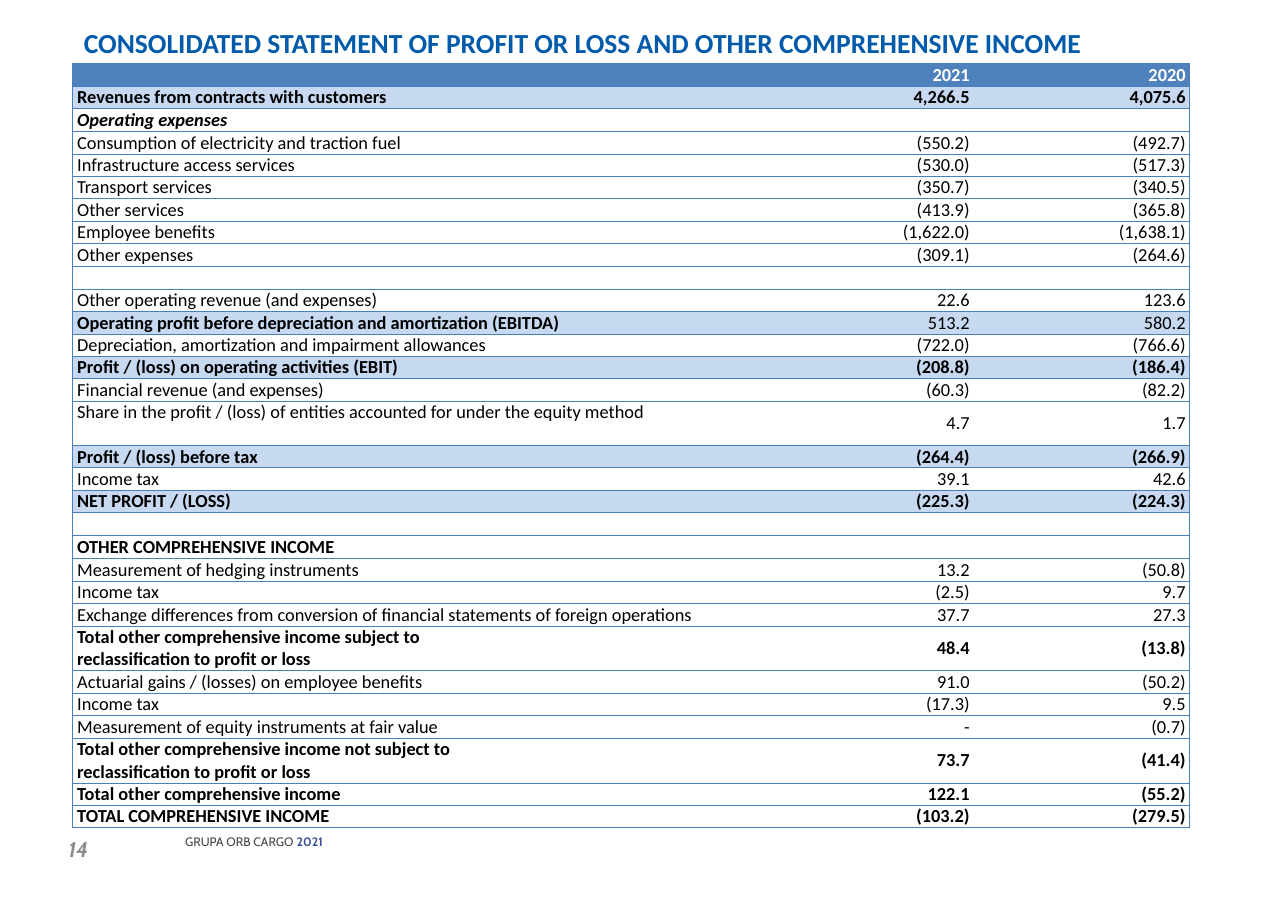
"""Build the consolidated profit or loss statement slide."""
import lxml.etree
import pptx
import pptx.dml.color
import pptx.enum.text
import pptx.oxml.ns
import pptx.util

Cm = pptx.util.Cm
Pt = pptx.util.Pt
ALIGN = pptx.enum.text.PP_ALIGN
ANCHOR = pptx.enum.text.MSO_ANCHOR

TITLE = "CONSOLIDATED STATEMENT OF PROFIT OR LOSS AND OTHER COMPREHENSIVE INCOME"
FOOTER = ("GRUPA ORB CARGO ", "2021")
PAGE_NUMBER = "14"
ROWS = [
    ("header", "", "2021", "2020"),
    ("band", "Revenues from contracts with customers", "4,266.5", "4,075.6"),
    ("italic", "Operating expenses", "", ""),
    ("plain", "Consumption of electricity and traction fuel", "(550.2)", "(492.7)"),
    ("plain", "Infrastructure access services", "(530.0)", "(517.3)"),
    ("plain", "Transport services", "(350.7)", "(340.5)"),
    ("plain", "Other services", "(413.9)", "(365.8)"),
    ("plain", "Employee benefits", "(1,622.0)", "(1,638.1)"),
    ("plain", "Other expenses", "(309.1)", "(264.6)"),
    ("plain", "", "", ""),
    ("plain", "Other operating revenue (and expenses)", "22.6", "123.6"),
    ("band light", "Operating profit before depreciation and amortization (EBITDA)", "513.2", "580.2"),
    ("plain", "Depreciation, amortization and impairment allowances", "(722.0)", "(766.6)"),
    ("band", "Profit / (loss) on operating activities (EBIT)", "(208.8)", "(186.4)"),
    ("plain", "Financial revenue (and expenses)", "(60.3)", "(82.2)"),
    ("tall", "Share in the profit / (loss) of entities accounted for under the equity method", "4.7", "1.7"),
    ("band", "Profit / (loss) before tax", "(264.4)", "(266.9)"),
    ("plain", "Income tax", "39.1", "42.6"),
    ("band", "NET PROFIT / (LOSS)", "(225.3)", "(224.3)"),
    ("plain", "", "", ""),
    ("bold", "OTHER COMPREHENSIVE INCOME", "", ""),
    ("plain", "Measurement of hedging instruments", "13.2", "(50.8)"),
    ("plain", "Income tax", "(2.5)", "9.7"),
    ("plain", "Exchange differences from conversion of financial statements of foreign operations", "37.7", "27.3"),
    ("bold", "Total other comprehensive income subject to\vreclassification to profit or loss", "48.4", "(13.8)"),
    ("plain", "Actuarial gains / (losses) on employee benefits", "91.0", "(50.2)"),
    ("plain", "Income tax", "(17.3)", "9.5"),
    ("plain", "Measurement of equity instruments at fair value", "-", "(0.7)"),
    ("bold", "Total other comprehensive income not subject to\vreclassification to profit or loss", "73.7", "(41.4)"),
    ("bold", "Total other comprehensive income", "122.1", "(55.2)"),
    ("bold", "TOTAL COMPREHENSIVE INCOME", "(103.2)", "(279.5)"),
]
FILLS = {"header": "4F81BD", "band": "C6D9F1", "band light": "C6D9F1"}
COLUMN_WIDTHS = (15.8, 4.98, 4.98)
LINE_HEIGHT, OPEN_HEIGHT = 0.51, 0.53
LEFT, TABLE_TOP = 1.68, 1.47
BORDER = "4B7EBC"


def color(value):
    return pptx.dml.color.RGBColor.from_string(value)


def format_span(span, size, shade, name="Calibri", bold=False, italic=False):
    font = span.font
    font.size, font.name, font.bold, font.italic = Pt(size), name, bold, italic
    font.color.rgb = color(shade)


def row_height(row):
    style, label, value, _ = row
    if not value:
        return OPEN_HEIGHT
    return LINE_HEIGHT * (2 if style == "tall" or "\v" in label else 1)


def add_borders(cell, visible):
    for side in "LRTB":
        line = lxml.etree.SubElement(cell._tc.get_or_add_tcPr(), pptx.oxml.ns.qn("a:ln" + side), w=str(Pt(0.75)))
        if side in visible:
            fill = lxml.etree.SubElement(line, pptx.oxml.ns.qn("a:solidFill"))
            lxml.etree.SubElement(fill, pptx.oxml.ns.qn("a:srgbClr"), val=BORDER)
        else:
            lxml.etree.SubElement(line, pptx.oxml.ns.qn("a:noFill"))


def fill_cell(cell, text, style, column):
    add_borders(cell, "TB" + {0: "L", 1: "", 2: "R"}[column])
    cell.fill.solid()
    cell.fill.fore_color.rgb = color(FILLS.get(style, "FFFFFF"))
    cell.margin_left = cell.margin_right = Cm(0.1)
    cell.margin_top = cell.margin_bottom = 0
    top = style == "tall" and column == 0
    cell.vertical_anchor = ANCHOR.TOP if top else ANCHOR.MIDDLE
    para = cell.text_frame.paragraphs[0]
    para.alignment = ALIGN.RIGHT if column else ALIGN.LEFT
    if not text:
        lxml.etree.SubElement(para._p, pptx.oxml.ns.qn("a:endParaRPr"), sz="1200")
        return
    para.text = text
    bold = style not in ("plain", "tall") and not (style == "band light" and column)
    shade = "FFFFFF" if style == "header" else "000000"
    for span in para.runs:
        format_span(span, 12, shade, bold=bold, italic=style == "italic")


def add_statement(page):
    heights = [row_height(row) for row in ROWS]
    frame = page.shapes.add_table(len(ROWS), len(COLUMN_WIDTHS), Cm(LEFT), Cm(TABLE_TOP),
                                  Cm(sum(COLUMN_WIDTHS)), Cm(sum(heights)))
    table = frame.table
    table.horz_banding = False
    for column, width in zip(table.columns, COLUMN_WIDTHS):
        column.width = Cm(width)
    for index, (style, *texts) in enumerate(ROWS):
        table.rows[index].height = Cm(heights[index])
        for column, text in enumerate(texts):
            fill_cell(table.cell(index, column), text, style, column)


def add_title(page):
    title = page.shapes.title
    title.left, title.top, title.width, title.height = Cm(LEFT), Cm(0.46), Cm(26.21), Cm(1.02)
    title.text_frame.text = TITLE
    title.text_frame.vertical_anchor = ANCHOR.MIDDLE
    para = title.text_frame.paragraphs[0]
    para.alignment = ALIGN.LEFT
    format_span(para.runs[0], 18, "015BAA", bold=True)


def add_footer(page):
    box = page.shapes.add_textbox(Cm(4.27), Cm(19.24), Cm(3.8), Cm(0.38))
    frame = box.text_frame
    frame.word_wrap = True
    frame.margin_left = frame.margin_right = frame.margin_top = frame.margin_bottom = 0
    for text, shade, bold in zip(FOOTER, ("454545", "3A4D98"), (False, True)):
        span = frame.paragraphs[0].add_run()
        span.text = text
        format_span(span, 8, shade, "Cabin", bold)

    box = page.shapes.add_textbox(Cm(1.12), Cm(18.9), Cm(1.17), Cm(1.32))
    box.text_frame.word_wrap = True
    box.text_frame.vertical_anchor = ANCHOR.MIDDLE
    box.text_frame.text = PAGE_NUMBER
    para = box.text_frame.paragraphs[0]
    para.alignment = ALIGN.RIGHT
    format_span(para.runs[0], 14, "8C8C8C", "Cabin", True, True)


def main():
    deck = pptx.Presentation()
    deck.slide_width, deck.slide_height = Cm(29.7), Cm(21)
    page = deck.slides.add_slide(deck.slide_layouts[5])
    add_title(page)
    add_statement(page)
    add_footer(page)
    deck.save("out.pptx")


if __name__ == "__main__":
    main()
